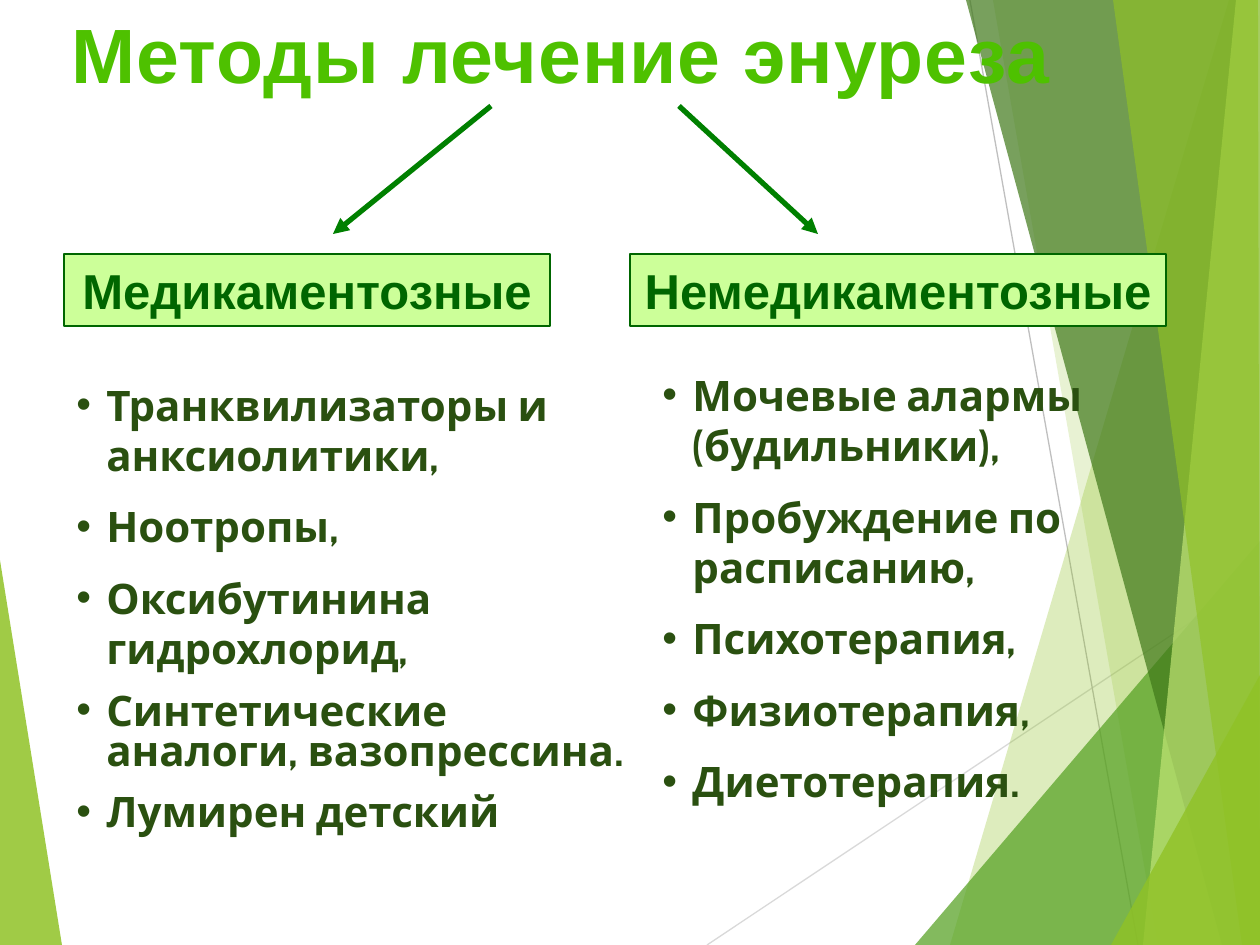
from lxml import etree
from pptx import Presentation
from pptx.dml.color import RGBColor
from pptx.enum.shapes import MSO_CONNECTOR, MSO_SHAPE
from pptx.enum.text import MSO_ANCHOR, PP_ALIGN
from pptx.oxml.ns import qn
from pptx.util import Emu, Pt

PX = 914400 / 126
W, H = 1260, 945
COLORS = {
    "lime": "90C226", "green": "54A021", "forest": "3F7819", "pale": "C0E474",
    "rule_light": "D9D9D9", "rule_dark": "BFBFBF",
    "label_fill": "CCFF99", "label_ink": "006600",
    "arrow": "008000", "title": "4EC100", "list": "2A5010",
}


def px(*lengths):
    return [Emu(round(n * PX)) for n in lengths]


def rgb(name):
    return RGBColor.from_string(COLORS[name])


prs = Presentation()
prs.slide_width, prs.slide_height = px(W, H)
s = prs.slides.add_slide(prs.slide_layouts[6])
shapes = s.shapes

# Lines: how many facets lie beneath, start, end, colour, width in points
rules = [
    (1, (707, H), (W, 576), "rule_light", 0.75),
    (1, (970, 0), (1138, H), "rule_dark", 0.75),
]
arrows = [
    (8, (491, 106), (333, 234), "arrow", 3),
    (8, (679, 106), (818, 234), "arrow", 3),
]
lines = rules + arrows

# Background facets, back to front: points, colour, opacity in percent
facets = [
    ([(0, 560), (62, H), (0, H)], "lime", 85),
    ([(1229, 0), (950, H), (W, H), (W, 0)], "lime", 30),
    ([(993, 0), (1158, H), (W, H), (W, 0)], "lime", 20),
    ([(915, H), (W, 541), (W, H)], "green", 72),
    ([(966, 0), (1222, H), (W, H), (W, 0)], "forest", 70),
    ([(1236, 0), (1143, H), (W, H), (W, 0)], "pale", 70),
    ([(1113, 0), (1242, H), (W, H), (1258, 0)], "lime", 65),
    ([(1111, H), (W, 675), (W, H)], "lime", 80),
]
for count, (points, color, opacity) in enumerate(facets, start=1):
    builder = shapes.build_freeform(*points[0], scale=PX)
    builder.add_line_segments(points[1:], close=True)
    sp = builder.convert_to_shape()
    sp.shadow.inherit = False
    sp.line.fill.background()
    sp.fill.solid()
    sp.fill.fore_color.rgb = rgb(color)
    srgb = next(sp._element.spPr.iter(qn("a:srgbClr")))
    etree.SubElement(srgb, qn("a:alpha"), val=str(opacity * 1000))

    for beneath, start, end, line_color, width in lines:
        if beneath != count:
            continue
        line = shapes.add_connector(MSO_CONNECTOR.STRAIGHT, *px(*start, *end))
        line.line.color.rgb = rgb(line_color)
        line.line.width = Pt(width)
        if line_color == "arrow":
            ln = line._element.spPr.find(qn("a:ln"))
            etree.SubElement(ln, qn("a:tailEnd"), type="triangle")
        etree.SubElement(line._element.spPr, qn("a:effectLst"))

# Method labels
for left, width, label in [(64, 486, "Медикаментозные"), (630, 536, "Немедикаментозные")]:
    sp = shapes.add_shape(MSO_SHAPE.RECTANGLE, *px(left, 254, width, 72))
    sp.shadow.inherit = False
    sp.fill.solid()
    sp.fill.fore_color.rgb = rgb("label_fill")
    sp.line.color.rgb = rgb("label_ink")
    sp.line.width = Pt(0.75)
    tf = sp.text_frame
    tf.word_wrap = True
    tf.vertical_anchor = MSO_ANCHOR.TOP
    p = tf.paragraphs[0]
    p.alignment = PP_ALIGN.CENTER
    r = p.add_run()
    r.text = label
    r.font.name, r.font.size, r.font.bold = "Arial", Pt(28), True
    r.font.color.rgb = rgb("label_ink")

# Bulleted lists: box, then (text, line spacing)
lists = [
    ((650, 363, 610, 547), [
        ("Мочевые алармы (будильники),", 1.0),
        ("Пробуждение по расписанию,", 1.0),
        ("Психотерапия,", 1.0),
        ("Физиотерапия,", 1.0),
        ("Диетотерапия.", 1.0),
    ]),
    ((64, 373, 592, 491), [
        ("Транквилизаторы и анксиолитики,", 1.0),
        ("Ноотропы,", 1.0),
        ("Оксибутинина гидрохлорид,", 1.0),
        ("Синтетические аналоги, вазопрессина.", 0.8),
        ("Лумирен детский", 0.8),
    ]),
]
indent = px(30)[0]
for box, items in lists:
    tf = shapes.add_textbox(*px(*box)).text_frame
    tf.word_wrap = True
    for i, (text, spacing) in enumerate(items):
        p = tf.add_paragraph() if i else tf.paragraphs[0]
        p.line_spacing = spacing
        p.space_before = Pt(12 if i else 0)
        pPr = p._p.get_or_add_pPr()
        pPr.set("marL", str(indent))
        pPr.set("indent", str(-indent))
        etree.SubElement(pPr, qn("a:buFont"), typeface="Arial")
        etree.SubElement(pPr, qn("a:buChar"), char="•")
        r = p.add_run()
        r.text = text
        r.font.name, r.font.size, r.font.bold = "Cabin", Pt(24), True
        r.font.color.rgb = rgb("list")

# Title
tf = shapes.add_textbox(*px(54, 0, 1014, 106)).text_frame
tf.word_wrap = False
p = tf.paragraphs[0]
p.alignment = PP_ALIGN.CENTER
r = p.add_run()
r.text = "Методы лечение энуреза"
r.font.name, r.font.size, r.font.bold = "Arial", Pt(44), True
r.font.color.rgb = rgb("title")
r._r.get_or_add_rPr().set("spc", "50")

prs.save("out.pptx")
